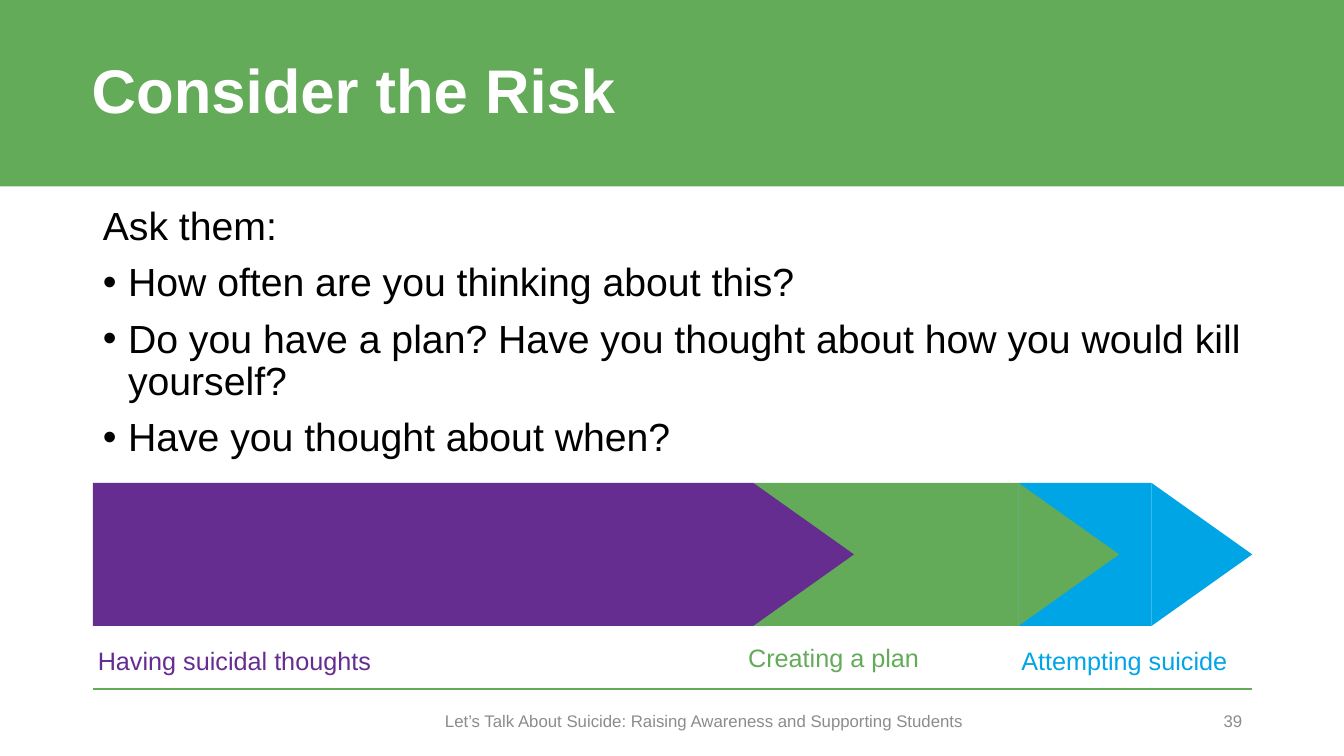
import pptx
import pptx.util
import pptx.dml.color
import pptx.enum.shapes
import pptx.enum.text
import lxml.etree
from pptx.util import Inches

GREEN, BLUE, PURPLE = "63AB59", "00A5E6", "662D91"
WHITE, BLACK, GREY = "FFFFFF", "000000", "8C8C8C"
ALIGN = pptx.enum.text.PP_ALIGN
ANCHOR = pptx.enum.text.MSO_ANCHOR
SHAPE = pptx.enum.shapes.MSO_SHAPE
NAMESPACE = "{http://schemas.openxmlformats.org/drawingml/2006/main}"
BAR_TOP, BAR_HEIGHT, TIP_LENGTH = 4.79, 1.42, 1.0


def set_color(color_format, value):
    """Set a colour from a hex string."""
    color_format.rgb = pptx.dml.color.RGBColor.from_string(value)


def set_fill(shape, color):
    """Give a shape a solid fill."""
    shape.fill.solid()
    set_color(shape.fill.fore_color, color)


def place(shape, left, top, width, height):
    """Position and size a shape in inches."""
    shape.left, shape.top = Inches(left), Inches(top)
    shape.width, shape.height = Inches(width), Inches(height)


def add_run(para, text, size, color, bold=False):
    """Append a formatted Arial run."""
    span = para.add_run()
    span.text = text
    span.font.name = "Arial"
    span.font.size = pptx.util.Pt(size)
    span.font.bold = bold
    set_color(span.font.color, color)


def set_bullet(para, indent, bullet=None):
    """Set the hanging indent and the bullet of a paragraph."""
    properties = para._p.get_or_add_pPr()
    properties.set("marL", str(Inches(indent)))
    properties.set("indent", str(-Inches(indent)))
    if bullet:
        lxml.etree.SubElement(properties, NAMESPACE + "buChar", char=bullet)
    else:
        lxml.etree.SubElement(properties, NAMESPACE + "buNone")


def add_title(page, text):
    """Fill the title placeholder as a green band."""
    title = page.shapes.title
    place(title, 0, 0, 13.33, 1.85)
    set_fill(title, GREEN)
    frame = title.text_frame
    frame.auto_size = pptx.enum.text.MSO_AUTO_SIZE.NONE
    frame.vertical_anchor = ANCHOR.MIDDLE
    frame.margin_right = Inches(1)
    para = frame.paragraphs[0]
    para._p.get_or_add_pPr().set("marL", str(Inches(0.81)))
    para.alignment = ALIGN.LEFT
    para.line_spacing = 0.9
    add_run(para, text, 44, WHITE, bold=True)


def add_questions(page, lead, questions):
    """Fill the body placeholder with a lead line and bullets."""
    body = page.placeholders[1]
    place(body, 0.92, 2, 11.5, 4.76)
    frame = body.text_frame
    frame.auto_size = pptx.enum.text.MSO_AUTO_SIZE.NONE
    for index, text in enumerate([lead] + questions):
        para = frame.add_paragraph() if index else frame.paragraphs[0]
        if index:
            set_bullet(para, 0.25, "•")
        else:
            set_bullet(para, 0)
        para.line_spacing = 0.9
        para.space_before = pptx.util.Pt(10 if index else 0)
        add_run(para, text, 28, BLACK)


def add_block(page, kind, left, top, width, height, color):
    """Add a flat shape without outline."""
    block = page.shapes.add_shape(
        kind, Inches(left), Inches(top), Inches(width), Inches(height))
    block.shadow.inherit = False
    set_fill(block, color)
    block.line.fill.background()
    return block


def add_stage(page, left, width, color):
    """Add a bar that ends in a pointed tip."""
    add_block(page, SHAPE.RECTANGLE, left, BAR_TOP, width, BAR_HEIGHT, color)
    tip_left = left + width + (TIP_LENGTH - BAR_HEIGHT) / 2
    tip_top = BAR_TOP + (BAR_HEIGHT - TIP_LENGTH) / 2
    tip = add_block(page, SHAPE.ISOSCELES_TRIANGLE,
                    tip_left, tip_top, BAR_HEIGHT, TIP_LENGTH, color)
    tip.rotation = 90


def add_label(page, text, left, top, width, size, color,
              alignment=ALIGN.LEFT, anchor=ANCHOR.TOP, margin=0.05):
    """Add a one-line text box."""
    box = page.shapes.add_textbox(
        Inches(left), Inches(top), Inches(width), Inches(0.4))
    frame = box.text_frame
    frame.word_wrap = True
    frame.vertical_anchor = anchor
    frame.margin_left = frame.margin_right = Inches(margin)
    para = frame.paragraphs[0]
    para.alignment = alignment
    add_run(para, text, size, color)


def add_rule(page):
    """Add the green line above the footer."""
    rule = page.shapes.add_connector(
        pptx.enum.shapes.MSO_CONNECTOR.STRAIGHT,
        Inches(0.92), Inches(6.84), Inches(12.42), Inches(6.84))
    set_color(rule.line.color, GREEN)
    rule.line.width = pptx.util.Pt(1.5)
    lxml.etree.SubElement(rule._element.spPr, NAMESPACE + "effectLst")


def main():
    """Build the slide and save it."""
    deck = pptx.Presentation()
    deck.slide_width, deck.slide_height = Inches(13.33), Inches(7.5)
    page = deck.slides.add_slide(deck.slide_layouts[1])
    add_title(page, "Consider the Risk")
    add_questions(page, "Ask them:", [
        "How often are you thinking about this?",
        "Do you have a plan? Have you thought about how you would kill yourself?",
        "Have you thought about when?",
    ])
    for left, width, color in [
        (10.1, 1.32, BLUE), (7.47, 2.63, GREEN), (0.92, 6.55, PURPLE),
    ]:
        add_stage(page, left, width, color)
    for text, left, top, width, color in [
        ("Having suicidal thoughts", 0.92, 6.35, 3.82, PURPLE),
        ("Creating a plan", 7.37, 6.32, 2.14, GREEN),
        ("Attempting suicide", 10.08, 6.35, 2.24, BLUE),
    ]:
        add_label(page, text, left, top, width, 18, color)
    add_rule(page)
    add_label(page, "Let’s Talk About Suicide: Raising Awareness and Supporting Students",
              3.7, 6.95, 6.57, 12, GREY, ALIGN.CENTER, ANCHOR.MIDDLE, 0.1)
    add_label(page, "39", 9.42, 6.95, 3, 12, GREY, ALIGN.RIGHT, ANCHOR.MIDDLE, 0.1)
    deck.save("out.pptx")


if __name__ == "__main__":
    main()
